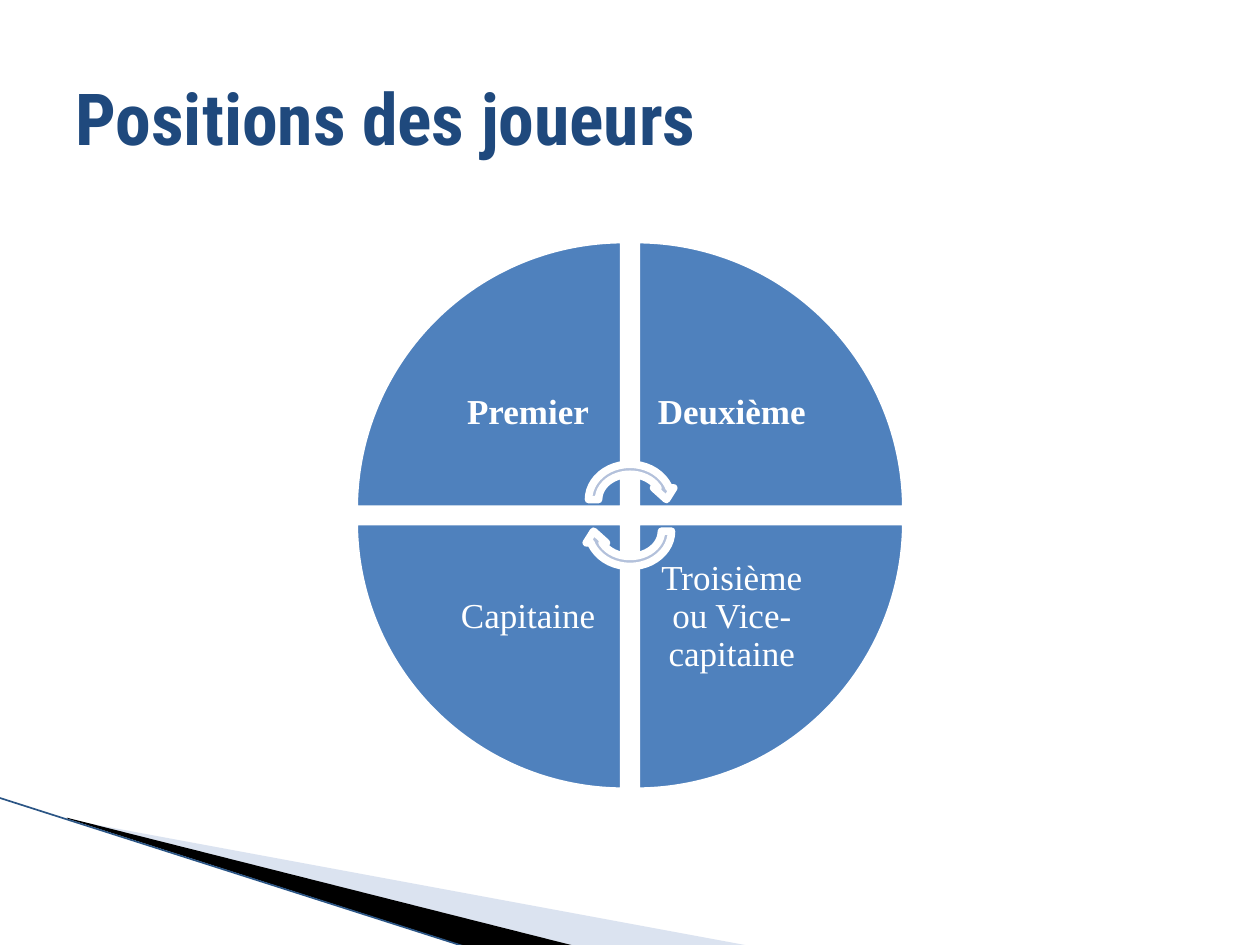
from lxml import etree
from pptx import Presentation
from pptx.dml.color import RGBColor
from pptx.enum.shapes import MSO_CONNECTOR, MSO_SHAPE
from pptx.enum.text import MSO_ANCHOR, PP_ALIGN
from pptx.oxml.ns import qn
from pptx.util import Pt

WEDGE = MSO_SHAPE.PIE_WEDGE
ARROW = MSO_SHAPE.CIRCULAR_ARROW
STRAIGHT = MSO_CONNECTOR.STRAIGHT
MIDDLE = MSO_ANCHOR.MIDDLE
LEFT, CENTER = PP_ALIGN.LEFT, PP_ALIGN.CENTER

COLORS = {
    "title": "1F497D",
    "wedge": "4F81BD",
    "arrow": "B3C1DB",
    "white": "FFFFFF",
    "black": "000000",
    "pale": "A7B9DB",
    "edge": "2B5585",
}
HEAD, BODY = "Roboto Condensed", "Times New Roman"


def rgb(name):
    return RGBColor.from_string(COLORS[name])


class Deck:
    """Holds the style and the current slide; lengths are in points."""

    def __init__(self, wide, high):
        self.prs = Presentation()
        self.prs.slide_width, self.prs.slide_height = Pt(wide), Pt(high)
        self.slide = self.prs.slides.add_slide(self.prs.slide_layouts[6])
        self.shapes = self.slide.shapes

    def shape(self, kind, x, y, w, h, fill, turn=0):
        item = self.shapes.add_shape(kind, Pt(x), Pt(y), Pt(w), Pt(h))
        item.shadow.inherit = False
        item.rotation = turn
        item.fill.solid()
        item.fill.fore_color.rgb = rgb(fill)
        item.line.color.rgb = rgb("white")
        item.line.width = Pt(4.33)

    def outline(self, points, fill, alpha=None):
        """Draw a closed polygon; alpha is its opacity in percent."""
        start, *rest = [(Pt(x), Pt(y)) for x, y in points]
        pen = self.shapes.build_freeform(*start)
        pen.add_line_segments(rest)
        item = pen.convert_to_shape()
        item.shadow.inherit = False
        item.line.fill.background()
        item.fill.solid()
        item.fill.fore_color.rgb = rgb(fill)
        if alpha is not None:
            tone = item.fill._xPr.find(qn("a:solidFill"))[0]
            etree.SubElement(tone, qn("a:alpha"), val=str(alpha * 1000))

    def line(self, x1, y1, x2, y2, color, width):
        item = self.shapes.add_connector(STRAIGHT, Pt(x1), Pt(y1), Pt(x2), Pt(y2))
        item.line.color.rgb = rgb(color)
        item.line.width = Pt(width)
        etree.SubElement(item._element.spPr, qn("a:effectLst"))

    def text(self, words, x, y, w, h, font, size, color, bold=False,
             align=LEFT, inset=7.2, space=1.0):
        frame = self.shapes.add_textbox(Pt(x), Pt(y), Pt(w), Pt(h)).text_frame
        frame.word_wrap = True
        frame.vertical_anchor = MIDDLE
        frame.margin_left = frame.margin_right = Pt(inset)
        frame.margin_top = frame.margin_bottom = Pt(min(inset, 11.5))
        para = frame.paragraphs[0]
        para.alignment = align
        para.line_spacing = space
        run = para.add_run()
        run.text = words
        run.font.name, run.font.size = font, Pt(size)
        run.font.bold = bold
        run.font.color.rgb = rgb(color)


def swoosh(deck):
    deck.outline([(39.6, 468.5), (428.4, 540.5), (328.3, 540.5), (39.6, 468)],
                 "pale", 40)
    deck.outline([(38.2, 467.3), (329, 540.7), (267.8, 541.4), (38.9, 468)],
                 "black")
    deck.line(-0.7, 455.8, 267.1, 541.4, "edge", 0.95)


def wheel(deck):
    mid_x, mid_y = 360, 294.5
    gap, side, box = 3.6, 154, 109.2
    parts = [  # label, bold, column, row: clockwise from top left
        ("Premier", True, -1, -1),
        ("Deuxième", True, 1, -1),
        ("Troisième ou Vice-capitaine", False, 1, 1),
        ("Capitaine", False, -1, 1),
    ]

    def place(mid, sign, size):
        """Start of a span that lies one gap before or after the middle."""
        return mid + gap if sign > 0 else mid - gap - size

    for i, (label, bold, col, row) in enumerate(parts):
        deck.shape(WEDGE, place(mid_x, col, side), place(mid_y, row, side),
                   side, side, "wedge", 90 * i)
        deck.text(label, place(mid_x, col, box), place(mid_y, row, box),
                  box, box, BODY, 20, "white", bold, CENTER, 11.5, 0.9)

    wide, high = 53.2, 46.2
    for shift, turn in ((-9, 0), (9, 180)):
        deck.shape(ARROW, mid_x - wide / 2, mid_y + shift - high / 2,
                   wide, high, "arrow", turn)


def main():
    deck = Deck(720, 540)
    swoosh(deck)
    wheel(deck)
    deck.text("Positions des joueurs", 36, 21.6, 648, 90, HEAD, 41, "title", True)
    deck.prs.save("out.pptx")


if __name__ == "__main__":
    main()
